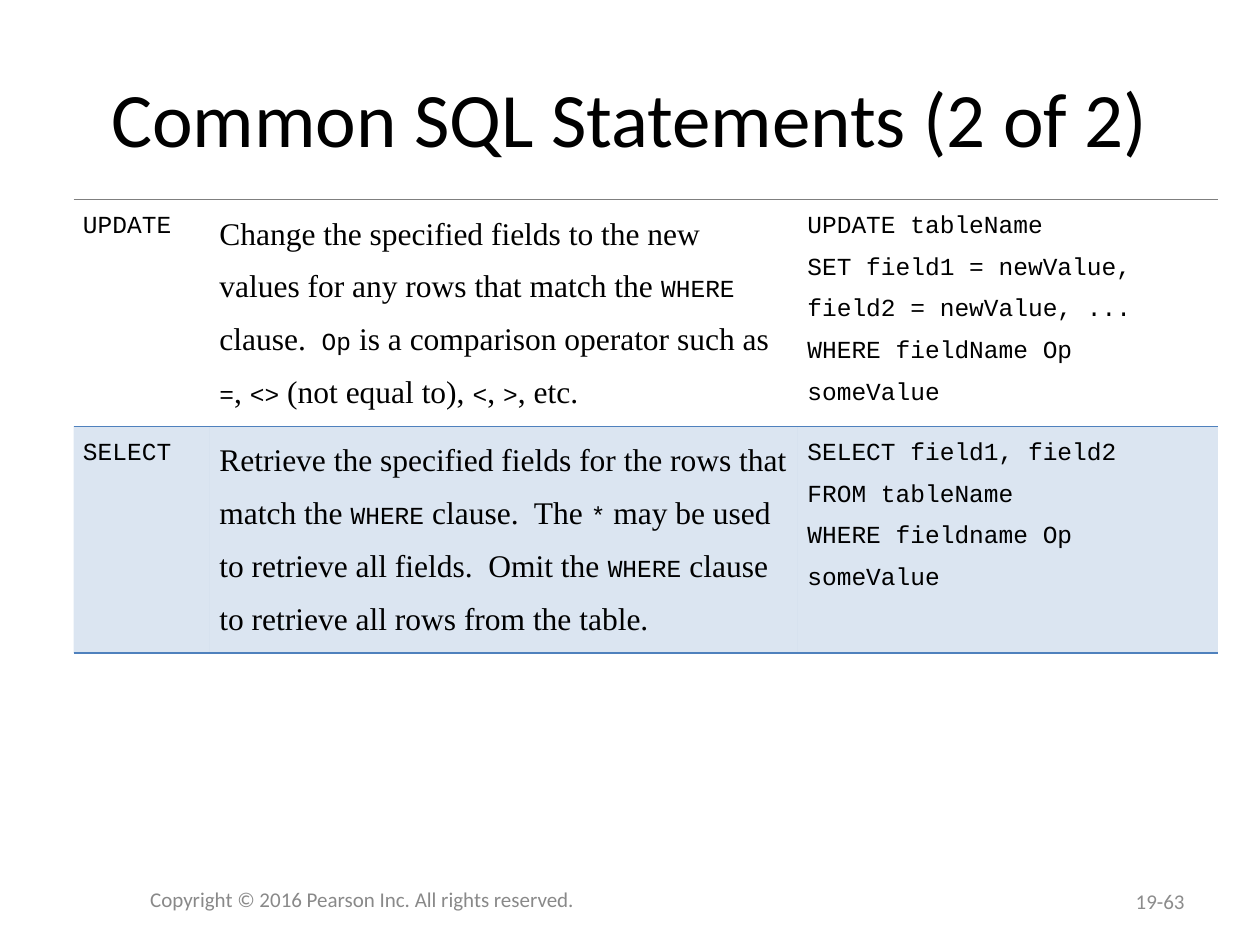
import copy

import pptx
import pptx.util
import pptx.dml.color
import pptx.enum.text
import pptx.oxml
import pptx.oxml.ns

Pt = pptx.util.Pt
ALIGN = pptx.enum.text.PP_ALIGN
MIDDLE = pptx.enum.text.MSO_ANCHOR.MIDDLE

HUES = {"text": "000000", "foot": "898989", "page": "8C8C8C",
        "blue": "4F81BD", "rule": "7F7F7F"}
CODE = ("Courier New", 14)
PROSE = ("Times New Roman", 18)
MARK = "`"  # encloses code words within prose

ROWS = [
    ("UPDATE",
     "Change the specified fields to the new values for any rows that match "
     "the `WHERE` clause.  `Op` is a comparison operator such as `=`, `<>` "
     "(not equal to), `<`, `>`, etc.",
     "UPDATE tableName\vSET field1 = newValue, field2 = newValue, ...\v"
     "WHERE fieldName Op someValue"),
    ("SELECT",
     "Retrieve the specified fields for the rows that match the `WHERE` "
     "clause.  The `*` may be used to retrieve all fields.  Omit the `WHERE` "
     "clause to retrieve all rows from the table.",
     "SELECT field1, field2\vFROM tableName\vWHERE fieldname Op someValue"),
]


def style(run, face, size, hue="text"):
    run.font.name = face
    run.font.size = Pt(size)
    run.font.color.rgb = pptx.dml.color.RGBColor.from_string(HUES[hue])


def place(shape, box):
    shape.left, shape.top, shape.width, shape.height = map(Pt, box)


def label(shape, text, size, hue, align):
    frame = shape.text_frame
    frame.text = text
    frame.word_wrap = True
    frame.vertical_anchor = MIDDLE
    para = frame.paragraphs[0]
    para.alignment = align
    style(para.runs[0], "Calibri", size, hue)


def add_title(slide, box):
    place(slide.shapes.title, box)
    label(slide.shapes.title, "Common SQL Statements (2 of 2)", 44, "text",
          ALIGN.CENTER)


def add_foot(slide, box, text, hue, align):
    shape = slide.shapes.add_textbox(*map(Pt, box))
    label(shape, text, 12, hue, align)


def edge(cell, index, side, hue=None, width=1):
    """Give one side of a cell a line, or none without a hue."""
    paint = (f'<a:solidFill><a:srgbClr val="{HUES[hue]}"/></a:solidFill>'
             if hue else "<a:noFill/>")
    line = pptx.oxml.parse_xml(
        f'<a:ln{side} {pptx.oxml.ns.nsdecls("a")} w="{Pt(width)}">'
        f"{paint}</a:ln{side}>")
    cell._tc.get_or_add_tcPr().insert(index, line)


def tint(cell):
    """Fill a cell with blue at 20 percent."""
    cell.fill.solid()
    cell.fill.fore_color.rgb = pptx.dml.color.RGBColor.from_string(HUES["blue"])
    color = cell._tc.tcPr.find(".//" + pptx.oxml.ns.qn("a:srgbClr"))
    color.append(pptx.oxml.parse_xml(
        f'<a:alpha {pptx.oxml.ns.nsdecls("a")} val="20000"/>'))


def write_code(para, text):
    """Write code lines; the breaks take the format of the runs."""
    para.text = text
    for run in para.runs:
        style(run, *CODE)
    form = para.runs[0]._r.rPr
    for gap in para._p.findall(pptx.oxml.ns.qn("a:br")):
        gap.insert(0, copy.deepcopy(form))


def write_prose(para, text):
    for i, part in enumerate(text.split(MARK)):
        run = para.add_run()
        run.text = part
        style(run, *(CODE if i % 2 else PROSE))


def fill_cell(cell, text, write):
    cell.margin_left, cell.margin_right = Pt(5.4), Pt(6.2)
    cell.margin_top = cell.margin_bottom = 0
    para = cell.text_frame.paragraphs[0]
    para.line_spacing = 1.5
    para.space_after = Pt(6)
    write(para, text)


def add_grid(slide, box):
    table = slide.shapes.add_table(2, 3, *map(Pt, box)).table
    table.first_row = table.horz_banding = False
    for col, width in zip(table.columns, (78, 336, 240)):
        col.width = Pt(width)
    for r, row in enumerate(ROWS):
        table.rows[r].height = Pt(box[3] / len(ROWS))
        for c, text in enumerate(row):
            cell = table.cell(r, c)
            fill_cell(cell, text, write_prose if c == 1 else write_code)
            if r:
                tint(cell)
            else:
                cell.fill.background()
            top = ("blue", 1) if r else ("rule", 0.5)
            sides = (("L",), ("R",), ("T", *top), ("B", "blue", 1))
            for i, side in enumerate(sides):
                edge(cell, i, *side)


def main():
    deck = pptx.Presentation()
    deck.slide_width, deck.slide_height = Pt(720), Pt(540)
    slide = deck.slides.add_slide(deck.slide_layouts[5])
    add_title(slide, (36, 21.6, 648, 90))
    # Statements with their meaning and syntax
    add_grid(slide, (42, 114, 654, 259.2))
    # Page number and copyright line
    add_foot(slide, (516, 500.5, 168, 28.8), "19-63", "page", ALIGN.RIGHT)
    add_foot(slide, (36, 499.5, 342, 28.8),
             "Copyright © 2016 Pearson Inc. All rights reserved.", "foot",
             ALIGN.CENTER)
    deck.save("out.pptx")


if __name__ == "__main__":
    main()
